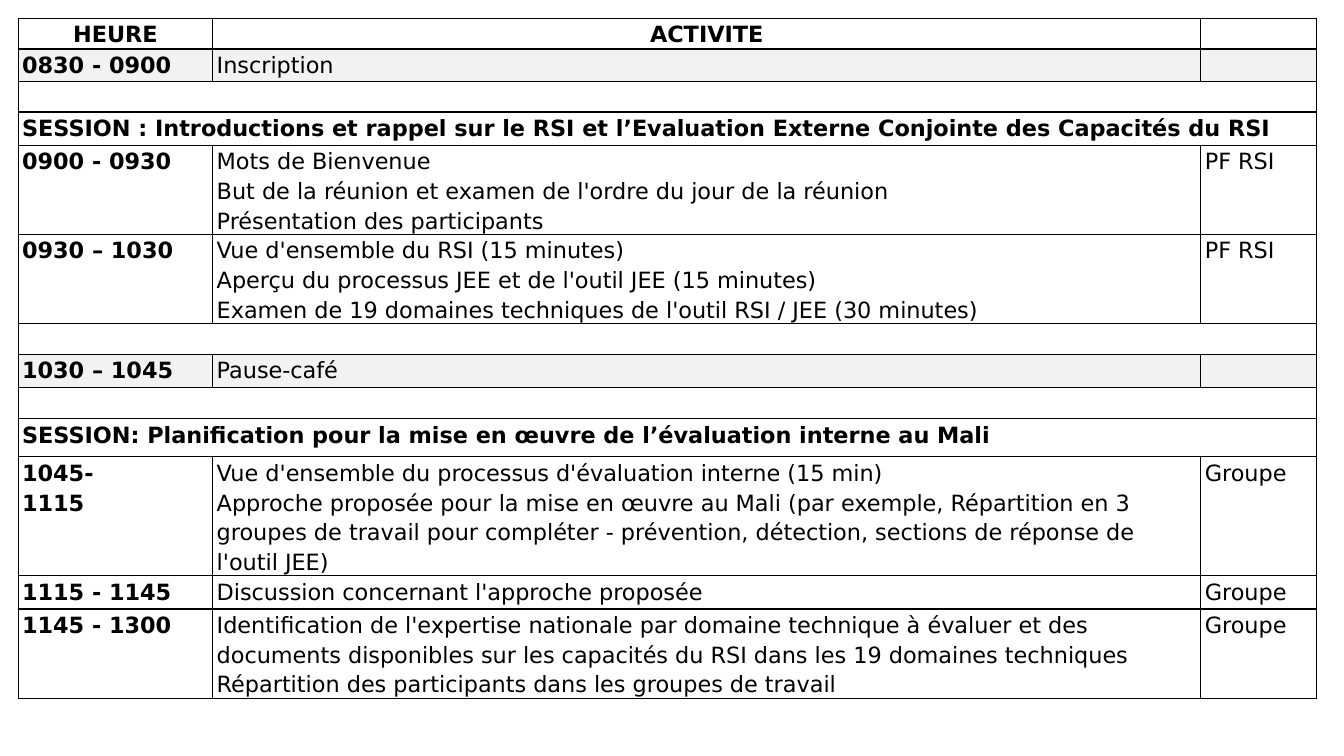
from pptx import Presentation
from pptx.dml.color import RGBColor
from pptx.enum.text import PP_ALIGN
from pptx.oxml import parse_xml
from pptx.oxml.ns import nsdecls
from pptx.util import Inches, Pt

BLACK = RGBColor(0x00, 0x00, 0x00)
WHITE = RGBColor(0xFF, 0xFF, 0xFF)
LIGHT_GREY = RGBColor(0xF2, 0xF2, 0xF2)
FONT_NAME = "DejaVu Sans"
COLUMN_WIDTHS = (1.93, 9.8, 1.15)

# Each row: kind, height in inches, cell texts
AGENDA = [
    ("header", 0.3, ["HEURE", "ACTIVITE"]),
    ("pause", 0.32, ["0830 - 0900", "Inscription"]),
    ("spacer", 0.3, []),
    ("session", 0.33, ["SESSION\u00a0: Introductions et rappel sur le RSI et "
                       "l’Evaluation Externe Conjointe des Capacités du RSI"]),
    ("activity", 0.88, ["0900 - 0930",
                        "Mots de Bienvenue\n"
                        "But de la réunion et examen de l'ordre du jour de la réunion\n"
                        "Présentation des participants",
                        "PF RSI"]),
    ("activity", 0.88, ["0930 – 1030",
                        "Vue d'ensemble du RSI (15 minutes)\n"
                        "Aperçu du processus JEE et de l'outil JEE (15 minutes)\n"
                        "Examen de 19 domaines techniques de l'outil RSI / JEE (30 minutes)",
                        "PF RSI"]),
    ("spacer", 0.3, []),
    ("pause", 0.33, ["1030 – 1045", "Pause-café"]),
    ("spacer", 0.3, []),
    ("session", 0.38, ["SESSION: Planification pour la mise en œuvre de "
                       "l’évaluation interne au Mali"]),
    ("activity", 1.17, ["1045-\n1115",
                        "Vue d'ensemble du processus d'évaluation interne (15 min)\n"
                        "Approche proposée pour la mise en œuvre au Mali (par exemple, "
                        "Répartition en 3 groupes de travail pour compléter - prévention, "
                        "détection, sections de réponse de l'outil JEE)",
                        "Groupe"]),
    ("activity", 0.33, ["1115 - 1145", "Discussion concernant l'approche proposée",
                        "Groupe"]),
    ("activity", 0.88, ["1145 - 1300",
                        "Identification de l'expertise nationale par domaine technique à "
                        "évaluer et des documents disponibles sur les capacités du RSI dans "
                        "les 19 domaines techniques\n"
                        "Répartition des participants dans les groupes de travail",
                        "Groupe"]),
]


def add_borders(cell):
    properties = cell._tc.get_or_add_tcPr()
    for side in ("lnL", "lnR", "lnT", "lnB"):
        properties.append(parse_xml(
            f'<a:{side} {nsdecls("a")} w="{Pt(1)}"><a:solidFill>'
            f'<a:srgbClr val="{BLACK}"/></a:solidFill></a:{side}>'))


def format_cell(cell, fill_color):
    add_borders(cell)
    cell.fill.solid()
    cell.fill.fore_color.rgb = fill_color
    cell.margin_left = cell.margin_right = Inches(0.04)
    cell.margin_top = cell.margin_bottom = 0


def write_cell(cell, text, bold, alignment):
    cell.text_frame.text = text
    for paragraph in cell.text_frame.paragraphs:
        paragraph.alignment = alignment
        paragraph.line_spacing = 1.15
        for run in paragraph.runs:
            run.font.name = FONT_NAME
            run.font.size = Pt(16)
            run.font.bold = bold
            run.font.color.rgb = BLACK


def add_agenda(slide, left, top):
    width = sum(COLUMN_WIDTHS)
    height = sum(row_height for _, row_height, _ in AGENDA)
    table = slide.shapes.add_table(
        len(AGENDA), len(COLUMN_WIDTHS),
        Inches(left), Inches(top), Inches(width), Inches(height)).table
    table.first_row = table.horz_banding = False
    for column, column_width in zip(table.columns, COLUMN_WIDTHS):
        column.width = Inches(column_width)

    for row_index, (kind, row_height, texts) in enumerate(AGENDA):
        row = table.rows[row_index]
        row.height = Inches(row_height)
        for cell in row.cells:
            format_cell(cell, LIGHT_GREY if kind == "pause" else WHITE)
        # Spacers and session titles run across the table
        if kind in ("spacer", "session"):
            table.cell(row_index, 0).merge(table.cell(row_index, 2))
        alignment = PP_ALIGN.CENTER if kind == "header" else PP_ALIGN.LEFT
        for column_index, text in enumerate(texts):
            bold = kind == "header" or column_index == 0
            write_cell(table.cell(row_index, column_index), text, bold, alignment)


def main():
    presentation = Presentation()
    presentation.slide_width = Inches(13.33)
    presentation.slide_height = Inches(7.5)
    slide = presentation.slides.add_slide(presentation.slide_layouts[6])
    add_agenda(slide, 0.18, 0.18)
    presentation.save("out.pptx")


if __name__ == "__main__":
    main()
